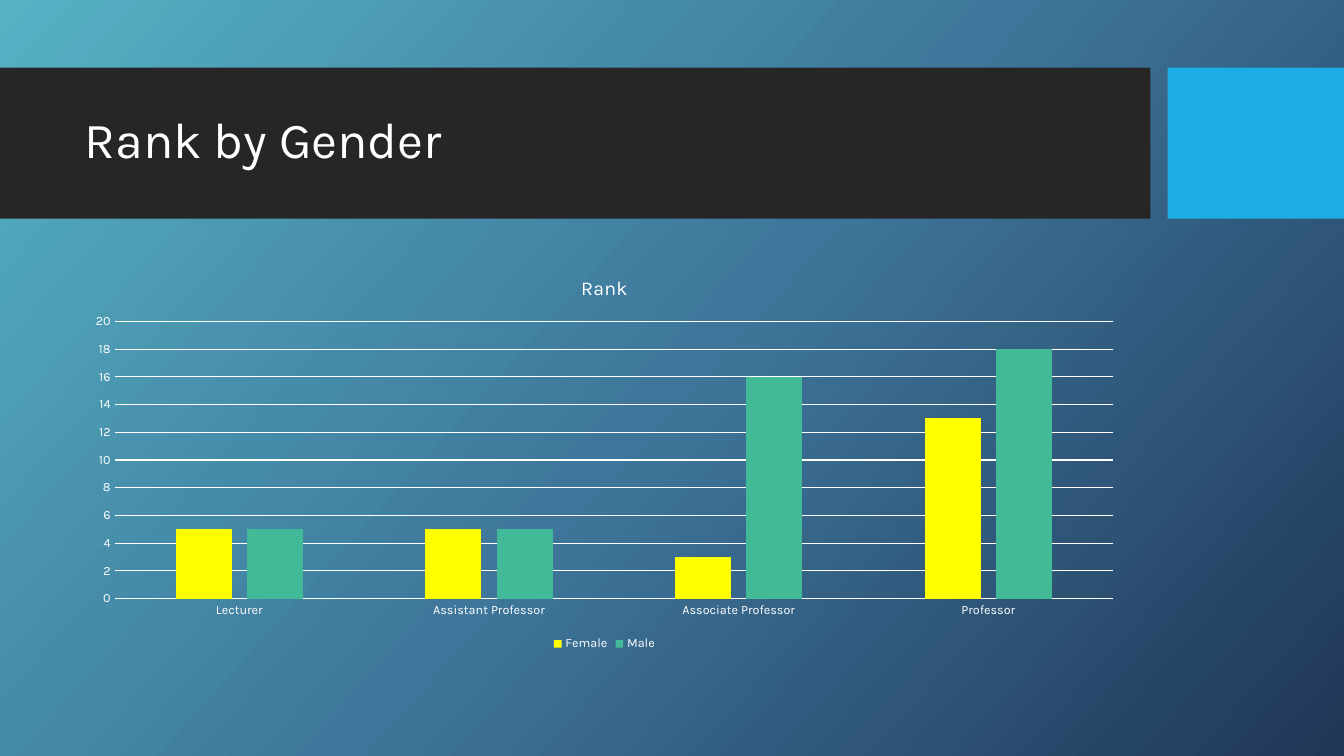
from copy import deepcopy

from pptx import Presentation
from pptx.chart.data import CategoryChartData
from pptx.dml.color import RGBColor
from pptx.enum.chart import XL_CHART_TYPE, XL_LEGEND_POSITION, XL_TICK_MARK
from pptx.enum.shapes import MSO_SHAPE
from pptx.enum.text import MSO_ANCHOR
from pptx.util import Inches, Pt

COLUMNS = XL_CHART_TYPE.COLUMN_CLUSTERED
BOTTOM = XL_LEGEND_POSITION.BOTTOM
NO_TICK = XL_TICK_MARK.NONE
RECTANGLE = MSO_SHAPE.RECTANGLE
MIDDLE = MSO_ANCHOR.MIDDLE

FONT = "Karla"
WHITE = "FFFFFF"
HEADING = "Rank by Gender"
CHART_TITLE = "Rank"
RANKS = ["Lecturer", "Assistant Professor", "Associate Professor", "Professor"]
GENDERS = [
    ("Female", [5, 5, 3, 13], "FFFF00"),
    ("Male", [5, 5, 16, 18], "42BA97"),
]
BACKDROP = [(0, "55B2C3"), (0.5, "3E779B"), (1, "203657")]
BANDS = [(0, 11.41, "262626"), (11.58, 1.75, "1CADE4")]
BAND_TOP, BAND_HEIGHT = 0.67, 1.5
CONTENT_LEFT, CONTENT_WIDTH = 0.74, 10.51


def rgb(value):
    return RGBColor.from_string(value)


def style(font, size):
    font.name = FONT
    font.size = Pt(size)
    font.bold = False
    font.color.rgb = rgb(WHITE)


def white_line(line):
    line.color.rgb = rgb(WHITE)
    line.width = Pt(0.75)


def paint_backdrop(slide):
    fill = slide.background.fill
    fill.gradient()
    fill.gradient_angle = 360 - 42
    first = fill.gradient_stops[0]._gs
    first.addnext(deepcopy(first))
    for stop, (position, color) in zip(fill.gradient_stops, BACKDROP):
        stop.position = position
        stop.color.rgb = rgb(color)


def add_heading(slide):
    for left, width, color in BANDS:
        band = slide.shapes.add_shape(
            RECTANGLE, Inches(left), Inches(BAND_TOP), Inches(width), Inches(BAND_HEIGHT))
        band.shadow.inherit = False
        band.fill.solid()
        band.fill.fore_color.rgb = rgb(color)
        band.line.fill.background()
    heading = slide.shapes.add_textbox(
        Inches(CONTENT_LEFT), Inches(0.82), Inches(CONTENT_WIDTH), Inches(1.18)).text_frame
    heading.word_wrap = True
    heading.vertical_anchor = MIDDLE
    line = heading.paragraphs[0]
    line.line_spacing = 0.9
    run = line.add_run()
    run.text = HEADING
    style(run.font, 36)


def add_rank_chart(slide):
    counts = CategoryChartData(number_format="###0")
    counts.categories = RANKS
    for gender, values, _ in GENDERS:
        counts.add_series(gender, values)
    chart = slide.shapes.add_chart(
        COLUMNS, Inches(CONTENT_LEFT), Inches(2.56),
        Inches(CONTENT_WIDTH), Inches(3.94), counts).chart
    style(chart.font, 10)

    chart.has_title = True
    title = chart.chart_title.text_frame.paragraphs[0].add_run()
    title.text = CHART_TITLE
    style(title.font, 14)
    chart.chart_title.include_in_layout = False

    chart.has_legend = True
    chart.legend.position = BOTTOM
    chart.legend.include_in_layout = False
    style(chart.legend.font, 9)

    plot = chart.plots[0]
    plot.gap_width = 219
    plot.overlap = -27
    plot.vary_by_categories = False
    for series, (_, _, color) in zip(plot.series, GENDERS):
        series.invert_if_negative = False
        series.format.fill.solid()
        series.format.fill.fore_color.rgb = rgb(color)

    for axis in (chart.category_axis, chart.value_axis):
        axis.major_tick_mark = NO_TICK
        axis.minor_tick_mark = NO_TICK
        style(axis.tick_labels.font, 9)
    white_line(chart.category_axis.format.line)
    counts_axis = chart.value_axis
    counts_axis.minimum_scale = 0
    counts_axis.maximum_scale = 20
    counts_axis.major_unit = 2
    counts_axis.format.line.fill.background()
    counts_axis.has_major_gridlines = True
    white_line(counts_axis.major_gridlines.format.line)
    counts_axis.tick_labels.number_format = "###0"
    counts_axis.tick_labels.number_format_is_linked = False


def main():
    deck = Presentation()
    deck.slide_width = Inches(13.33)
    deck.slide_height = Inches(7.5)
    slide = deck.slides.add_slide(deck.slide_layouts[6])
    paint_backdrop(slide)
    add_heading(slide)
    add_rank_chart(slide)
    deck.save("out.pptx")


if __name__ == "__main__":
    main()
